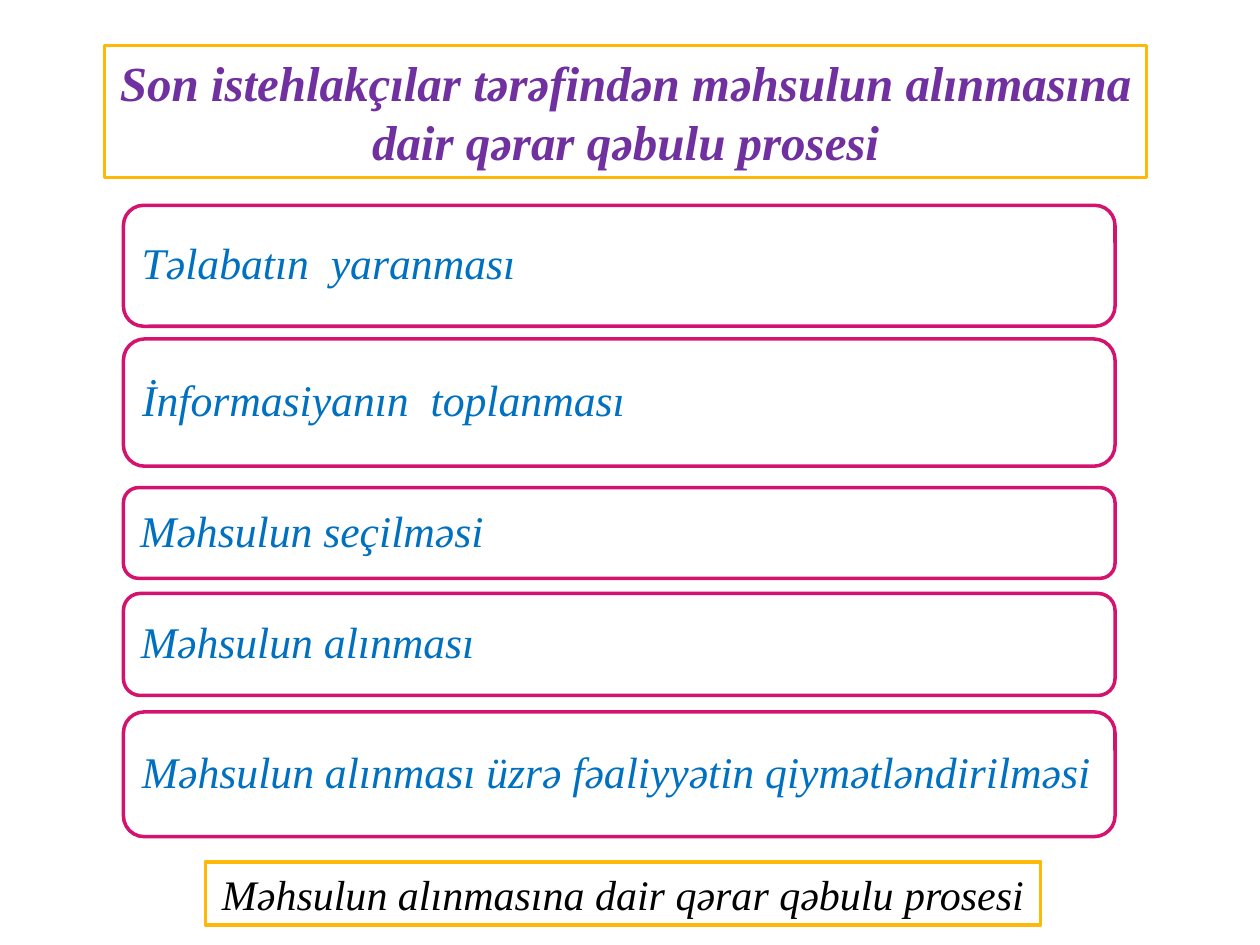
import pptx
import pptx.dml.color
import pptx.enum.shapes
import pptx.enum.text
import pptx.util
from dataclasses import dataclass


@dataclass(frozen=True)
class Theme:
    font: str = "Times New Roman"
    paper: str = "FFFFFF"
    frame: str = "FEB80A"
    step_line: str = "D4136F"
    title_text: str = "7030A0"
    step_text: str = "0070C0"
    caption_text: str = "000000"
    title_size: int = 28
    step_size: int = 25
    caption_size: int = 24
    line_width: int = 2


theme = Theme()
shapes_of = pptx.enum.shapes.MSO_SHAPE
align = pptx.enum.text.PP_ALIGN
rgb = pptx.dml.color.RGBColor.from_string

deck = pptx.Presentation()
deck.slide_width = pptx.util.Inches(10)
deck.slide_height = pptx.util.Inches(7.5)
slide = deck.slides.add_slide(deck.slide_layouts[6])


def add_box(preset, bounds, outline, text, size, color, alignment, bold=False):
    """Draw a white outlined box with one italic paragraph; bounds in inches."""
    box = slide.shapes.add_shape(preset, *map(pptx.util.Inches, bounds))
    box.shadow.inherit = False
    box.fill.solid()
    box.fill.fore_color.rgb = rgb(theme.paper)
    box.line.color.rgb = rgb(outline)
    box.line.width = pptx.util.Pt(theme.line_width)
    frame = box.text_frame
    frame.word_wrap = True
    frame.vertical_anchor = pptx.enum.text.MSO_ANCHOR.MIDDLE
    paragraph = frame.paragraphs[0]
    paragraph.alignment = alignment
    run = paragraph.add_run()
    run.text = text
    run.font.name = theme.font
    run.font.size = pptx.util.Pt(size)
    run.font.bold = bold
    run.font.italic = True
    run.font.color.rgb = rgb(color)
    return box


add_box(shapes_of.RECTANGLE, (0.83, 0.36, 8.27, 1.05), theme.frame,
        "Son istehlakçılar tərəfindən məhsulun alınmasına dair qərar qəbulu prosesi",
        theme.title_size, theme.title_text, align.CENTER, bold=True)

# Each step: text, top and height of its row
steps = [
    ("Təlabatın  yaranması", 1.63, 0.96),
    ("İnformasiyanın  toplanması", 2.69, 1.01),
    ("Məhsulun seçilməsi", 3.87, 0.72),
    ("Məhsulun alınması", 4.71, 0.81),
    ("Məhsulun alınması üzrə fəaliyyətin qiymətləndirilməsi", 5.65, 0.99),
]
for step, top, height in steps:
    step_box = add_box(shapes_of.ROUNDED_RECTANGLE, (0.98, top, 7.87, height),
                       theme.step_line, step, theme.step_size, theme.step_text,
                       align.LEFT)
    step_box.text_frame.paragraphs[0].line_spacing = 0.9

caption = add_box(shapes_of.RECTANGLE, (1.63, 6.84, 6.63, 0.5), theme.frame,
                  "Məhsulun alınmasına dair qərar qəbulu prosesi",
                  theme.caption_size, theme.caption_text, align.CENTER)
caption.text_frame.word_wrap = False

deck.save("out.pptx")
